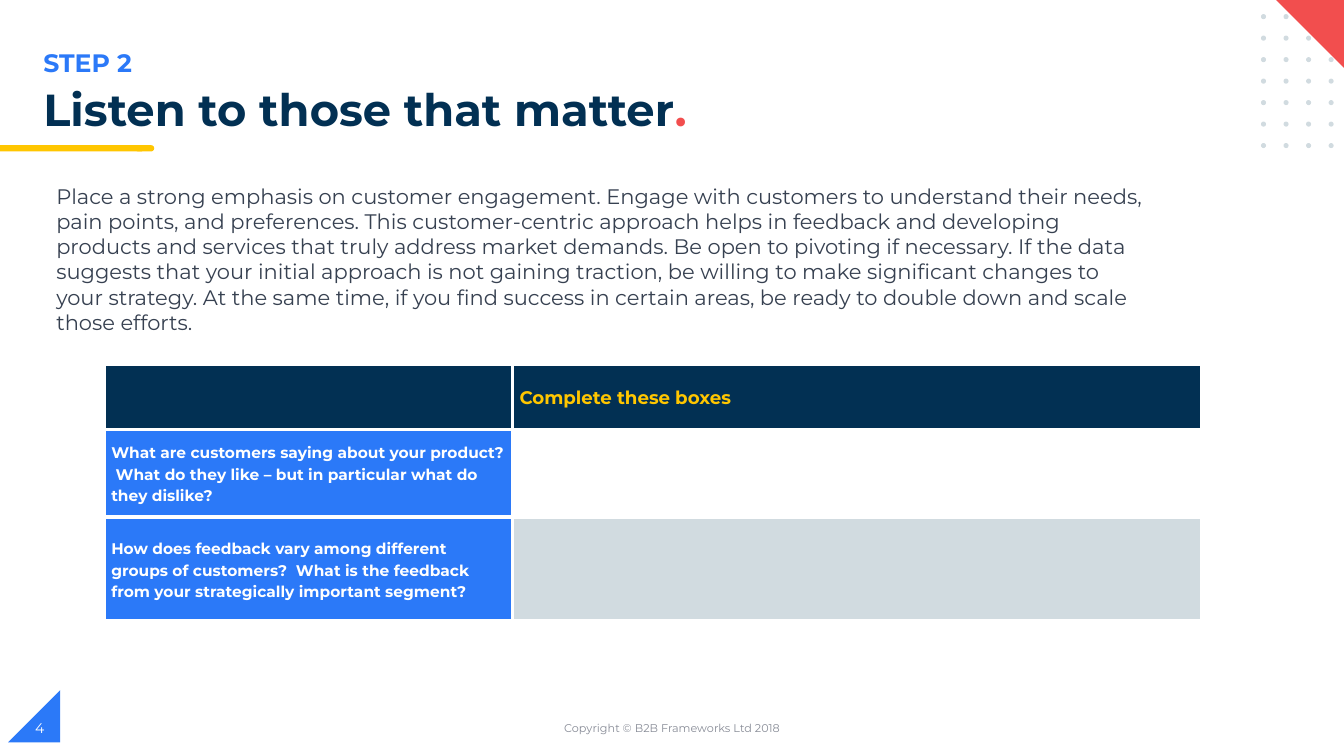
from dataclasses import dataclass
from itertools import product

from lxml.etree import SubElement
from pptx import Presentation
from pptx.dml.color import RGBColor
from pptx.enum.shapes import MSO_SHAPE
from pptx.enum.text import MSO_ANCHOR, MSO_AUTO_SIZE, PP_ALIGN
from pptx.oxml.ns import qn
from pptx.util import Pt


@dataclass(frozen=True)
class Theme:
    """Colours, font and type sizes of the slide."""
    font: str = "Montserrat"
    navy: str = "023053"
    blue: str = "2B79F8"
    yellow: str = "FFC600"
    red: str = "F24E4E"
    pale: str = "D1DBE0"
    white: str = "FFFFFF"
    body: str = "374151"
    muted: str = "888C97"
    title_size: float = 32
    step_size: float = 18
    body_size: float = 15
    header_size: float = 13
    cell_size: float = 11
    number_size: float = 10
    footer_size: float = 8


THEME = Theme()

BODY = (
    "Place a strong emphasis on customer engagement. Engage with customers to "
    "understand their needs, pain points, and preferences. This customer-centric "
    "approach helps in feedback and developing products and services that truly "
    "address market demands. Be open to pivoting if necessary. If the data suggests "
    "that your initial approach is not gaining traction, be willing to make "
    "significant changes to your strategy. At the same time, if you find success in "
    "certain areas, be ready to double down and scale those efforts."
)
QUESTIONS = (
    "What are customers saying about your product?  What do they like – but in "
    "particular what do they dislike?",
    "How does feedback vary among different groups of customers?  What is the "
    "feedback from your strategically important segment?",
)


def write_text(frame, text, *, size, color, bold=False, align=PP_ALIGN.LEFT,
               anchor=MSO_ANCHOR.TOP, spacing=1.0, ending=""):
    """Fill a text frame with one formatted paragraph and an optional red ending."""
    frame.word_wrap = True
    frame.vertical_anchor = anchor
    paragraph = frame.paragraphs[0]
    paragraph.alignment = align
    paragraph.line_spacing = spacing
    for part, part_color in ((text, color), (ending, THEME.red)):
        if part:
            run = paragraph.add_run()
            run.text = part
            run.font.name = THEME.font
            run.font.size = Pt(size)
            run.font.bold = bold
            run.font.color.rgb = RGBColor.from_string(part_color)


def add_text(slide, left, top, width, height, text, **text_format):
    """Add a text box."""
    box = slide.shapes.add_textbox(Pt(left), Pt(top), Pt(width), Pt(height))
    write_text(box.text_frame, text, **text_format)


def add_shape(slide, kind, left, top, width, height, color, rotation=0):
    """Add a plain filled shape without outline or shadow."""
    shape = slide.shapes.add_shape(kind, Pt(left), Pt(top), Pt(width), Pt(height))
    shape.rotation = rotation
    shape.shadow.inherit = False
    shape.fill.solid()
    shape.fill.fore_color.rgb = RGBColor.from_string(color)
    shape.line.fill.background()


def add_decoration(slide):
    """Add the dot grid, the corner triangles and the title underline."""
    for row, column in product(range(7), range(4)):
        add_shape(slide, MSO_SHAPE.OVAL, 900.7 + 16.1 * column, 10.1 + 15.35 * row,
                  3.6, 3.6, THEME.pale)
    add_shape(slide, MSO_SHAPE.RIGHT_TRIANGLE, 910.8, -0.7, 51.8, 51.8, THEME.red, 180)
    add_shape(slide, MSO_SHAPE.RIGHT_TRIANGLE, 5.8, 493, 37.2, 37.2, THEME.blue, 270)
    add_shape(slide, MSO_SHAPE.FLOWCHART_TERMINATOR, 96.5, 103.7, 13.7, 4.5, THEME.yellow)
    add_shape(slide, MSO_SHAPE.RECTANGLE, 0, 103.7, 101.5, 4.5, THEME.yellow)


def add_title(slide, text, ending):
    """Place and format the title placeholder."""
    title = slide.shapes.title
    title.left, title.top, title.width, title.height = Pt(23.8), Pt(59), Pt(802.8), Pt(40.3)
    title.text_frame.auto_size = MSO_AUTO_SIZE.NONE
    write_text(title.text_frame, text, size=THEME.title_size, color=THEME.navy,
               bold=True, spacing=0.9, ending=ending)


def format_cell(cell, fill, border_width=3):
    """Give a cell white borders, a fill and narrow margins."""
    properties = cell._tc.get_or_add_tcPr()
    for side in ("lnL", "lnR", "lnT", "lnB"):
        border = SubElement(properties, qn(f"a:{side}"), w=str(Pt(border_width)))
        solid = SubElement(border, qn("a:solidFill"))
        SubElement(solid, qn("a:srgbClr"), val=THEME.white)
    cell.fill.solid()
    cell.fill.fore_color.rgb = RGBColor.from_string(fill)
    cell.margin_left = cell.margin_right = Pt(5)
    cell.margin_top = cell.margin_bottom = Pt(0)
    cell.vertical_anchor = MSO_ANCHOR.MIDDLE


def add_question_table(slide):
    """Add the table of questions with boxes to complete."""
    widths, heights = (291.6, 492.5), (46.8, 62.6, 74.2)
    table = slide.shapes.add_table(3, 2, Pt(74.5), Pt(260), Pt(sum(widths)),
                                   Pt(sum(heights))).table
    table.first_row = table.horz_banding = False
    for column, width in zip(table.columns, widths):
        column.width = Pt(width)
    for row, height in zip(table.rows, heights):
        row.height = Pt(height)
    fills = ((THEME.navy, THEME.navy), (THEME.blue, THEME.white), (THEME.blue, THEME.pale))
    for row, column in product(range(3), range(2)):
        format_cell(table.cell(row, column), fills[row][column])
    cell_format = {"bold": True, "anchor": MSO_ANCHOR.MIDDLE, "spacing": 1.15}
    write_text(table.cell(0, 1).text_frame, "Complete these boxes",
               size=THEME.header_size, color=THEME.yellow, **cell_format)
    for row, question in enumerate(QUESTIONS, start=1):
        write_text(table.cell(row, 0).text_frame, question,
                   size=THEME.cell_size, color=THEME.white, **cell_format)


def main():
    """Build and save the slide."""
    presentation = Presentation()
    presentation.slide_width, presentation.slide_height = Pt(960), Pt(540)
    slide = presentation.slides.add_slide(presentation.slide_layouts[5])
    add_decoration(slide)
    add_text(slide, 23.8, 30.2, 481.7, 28.8, "STEP 2",
             size=THEME.step_size, color=THEME.blue, bold=True)
    add_title(slide, "Listen to those that matter", ".")
    add_text(slide, 33.1, 127.4, 795.6, 97.9, BODY, size=THEME.body_size, color=THEME.body)
    add_question_table(slide)
    add_text(slide, 318.2, 505.4, 324, 28.8, "Copyright © B2B Frameworks Ltd 2018",
             size=THEME.footer_size, color=THEME.muted, align=PP_ALIGN.CENTER,
             anchor=MSO_ANCHOR.MIDDLE)
    add_text(slide, 18, 505.4, 216, 28.8, "4", size=THEME.number_size,
             color=THEME.white, anchor=MSO_ANCHOR.MIDDLE)
    presentation.save("out.pptx")


if __name__ == "__main__":
    main()
